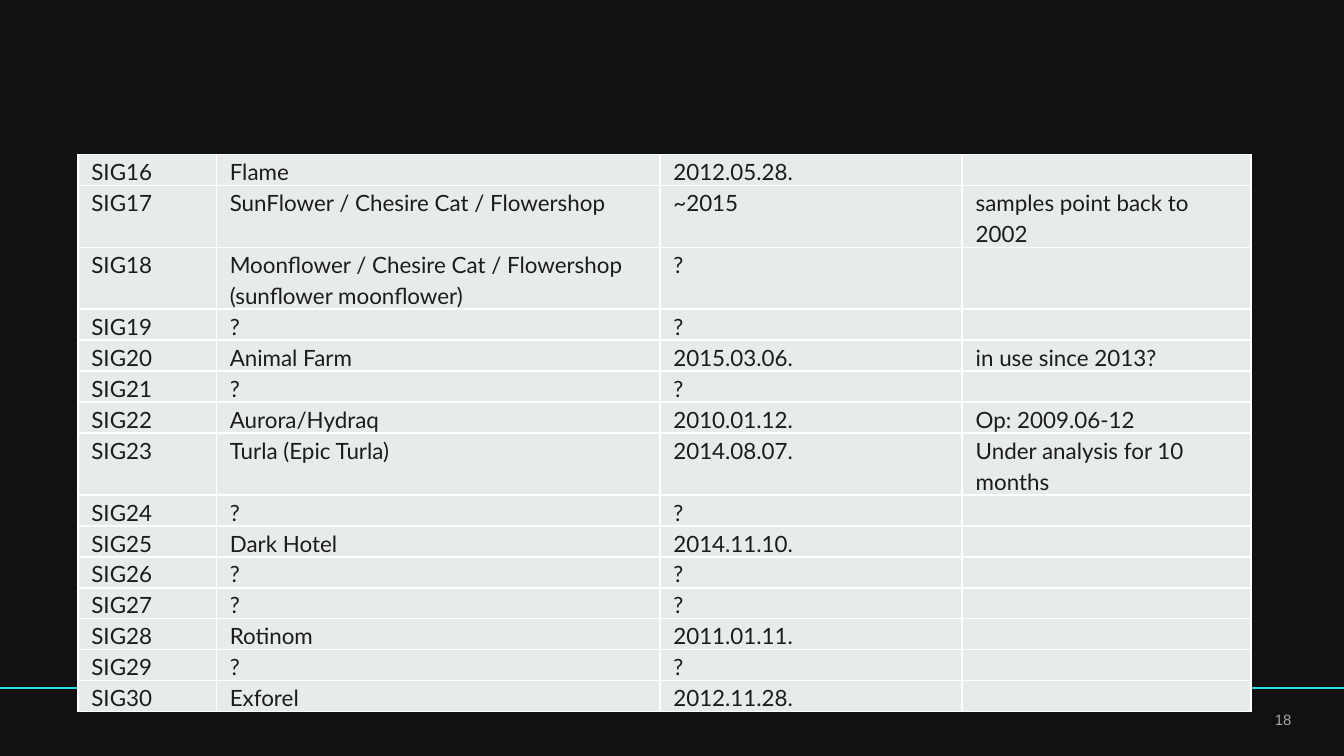
import pptx
import pptx.util
import pptx.dml.color
import pptx.enum.shapes
import pptx.enum.text
import pptx.oxml.ns
from lxml import etree

Inches = pptx.util.Inches
Pt = pptx.util.Pt
qn = pptx.oxml.ns.qn

ROWS = [
    ("SIG16", "Flame", "2012.05.28.", ""),
    ("SIG17", "SunFlower / Chesire Cat / Flowershop", "~2015",
     "samples point back to 2002"),
    ("SIG18", "Moonflower / Chesire Cat / Flowershop (sunflower moonflower)", "?", ""),
    ("SIG19", "?", "?", ""),
    ("SIG20", "Animal Farm", "2015.03.06.", "in use since 2013?"),
    ("SIG21", "?", "?", ""),
    ("SIG22", "Aurora/Hydraq", "2010.01.12.", "Op: 2009.06-12"),
    ("SIG23", "Turla (Epic Turla)", "2014.08.07.", "Under analysis for 10 months"),
    ("SIG24", "?", "?", ""),
    ("SIG25", "Dark Hotel", "2014.11.10.", ""),
    ("SIG26", "?", "?", ""),
    ("SIG27", "?", "?", ""),
    ("SIG28", "Rotinom", "2011.01.11.", ""),
    ("SIG29", "?", "?", ""),
    ("SIG30", "Exforel", "2012.11.28.", ""),
]
WIDTHS = [1.03, 3.3, 2.25, 2.15]
TALL = {"SIG17", "SIG18", "SIG23"}
LINE = 0.23


def color(code):
    return pptx.dml.color.RGBColor.from_string(code)


def write(frame, text, font="Lato", size=12, ink="1C1C1C", align=None, space=None):
    para = frame.paragraphs[0]
    para.alignment = align
    para.line_spacing = space
    if not text:
        para._p.get_or_add_endParaRPr().set("sz", str(size * 100))
        return
    run = para.add_run()
    run.text = text
    run.font.name = font
    run.font.size = Pt(size)
    run.font.color.rgb = color(ink)


def border(cell, ink, width):
    props = cell._tc.get_or_add_tcPr()
    for spot, side in enumerate(("lnL", "lnR", "lnT", "lnB")):
        edge = etree.Element(qn("a:" + side), w=str(Pt(width)))
        fill = etree.SubElement(edge, qn("a:solidFill"))
        etree.SubElement(fill, qn("a:srgbClr"), val=ink)
        props.insert(spot, edge)


deck = pptx.Presentation()
deck.slide_width = Inches(10)
deck.slide_height = deck.slide_width * 9 // 16
slide = deck.slides.add_slide(deck.slide_layouts[6])
slide.background.fill.solid()
slide.background.fill.fore_color.rgb = color("111111")

rule = slide.shapes.add_connector(
    pptx.enum.shapes.MSO_CONNECTOR.STRAIGHT,
    Inches(0), Inches(5.12), Inches(10), Inches(5.12))
rule.line.fill.solid()
rule.line.fill.fore_color.rgb = color("29DEE0")
rule.line.width = Pt(0.75)
etree.SubElement(rule._element.spPr, qn("a:effectLst"))

number = slide.shapes.add_textbox(
    Inches(9.31), Inches(5.29), Inches(0.3), Inches(0.16)).text_frame
number.word_wrap = True
number.margin_left = number.margin_right = 0
number.margin_top = number.margin_bottom = 0
write(number, "18", font="Arial", size=8, ink="A6A6A6",
      align=pptx.enum.text.PP_ALIGN.RIGHT)

heights = [LINE * (2 if row[0] in TALL else 1) for row in ROWS]
table = slide.shapes.add_table(
    len(ROWS), len(WIDTHS), Inches(0.58), Inches(1.15),
    Inches(sum(WIDTHS)), Inches(sum(heights))).table
table.first_row = False
table.horz_banding = False
for column, width in zip(table.columns, WIDTHS):
    column.width = Inches(width)
for line, height, row in zip(table.rows, heights, ROWS):
    line.height = Inches(height)
    for cell, text in zip(line.cells, row):
        cell.margin_left = cell.margin_right = Inches(0.1)
        cell.margin_top = cell.margin_bottom = 0
        cell.fill.solid()
        cell.fill.fore_color.rgb = color("E7EBEA")
        border(cell, "FFFFFF", 1)
        write(cell.text_frame, text, space=1.15)

deck.save("out.pptx")
